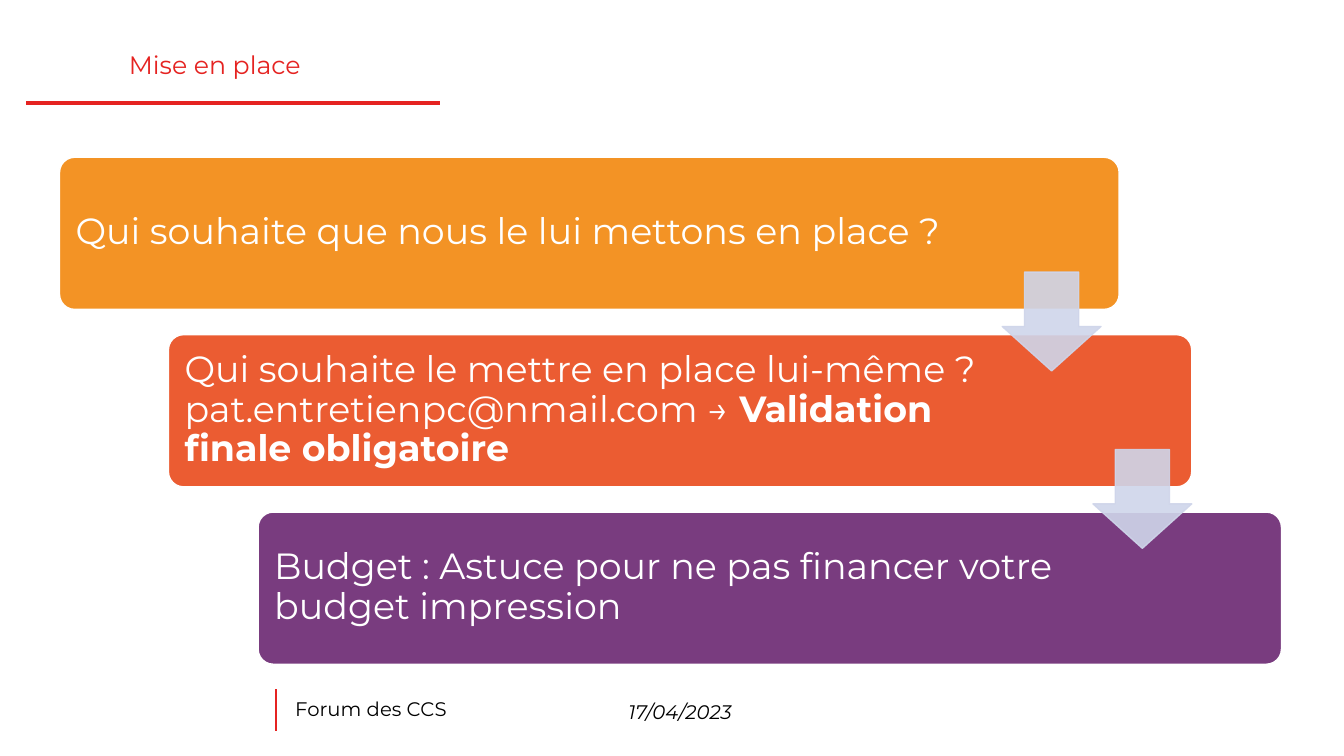
from lxml import etree
from pptx import Presentation
from pptx import util as u
from pptx.dml.color import RGBColor
from pptx.enum import shapes, text
from pptx.oxml import ns

PX = 9144
FONT = "Montserrat"
RED = RGBColor(0xE5, 0x23, 0x21)
BLACK = RGBColor(0, 0, 0)
WHITE = RGBColor(0xFF, 0xFF, 0xFF)
ORANGE = RGBColor(0xF3, 0x93, 0x25)
CORAL = RGBColor(0xEB, 0x5C, 0x32)
PURPLE = RGBColor(0x79, 0x3C, 0x7F)
PALE_BLUE = RGBColor(0xCF, 0xD5, 0xEA)

STEP_HEIGHT, STEP_PITCH = 151, 176
ARROW_SIZE = 98
STEPS = [
    (0, 1051, 883, ORANGE, [("Qui souhaite que nous le lui mettons en place ?", False)]),
    (108, 1015, 818, CORAL, [
        ("Qui souhaite le mettre en place lui-même ? pat.entretienpc@nmail.com → ", False),
        ("Validation finale obligatoire", True),
    ]),
    (197, 1015, 818, PURPLE, [
        ("Budget : Astuce pour ne pas financer votre budget impression", False),
    ]),
]


def emu(*lengths):
    return [u.Emu(length * PX) for length in lengths]


def add_text(slide, box, runs, size, color, italic=False, align=None,
             anchor=text.MSO_ANCHOR.TOP, spacing=0.9, inset=None):
    frame = slide.shapes.add_textbox(*emu(*box)).text_frame
    frame.word_wrap = True
    frame.vertical_anchor = anchor
    if inset is not None:
        (frame.margin_left, frame.margin_top,
         frame.margin_right, frame.margin_bottom) = emu(*[inset] * 4)
    paragraph = frame.paragraphs[0]
    paragraph.alignment = align
    paragraph.line_spacing = spacing
    for content, bold in runs:
        run = paragraph.add_run()
        run.text = content
        run.font.name = FONT
        run.font.size = u.Pt(size)
        run.font.bold = bold
        run.font.italic = italic
        run.font.color.rgb = color


def add_rule(slide, start, end, width):
    rule = slide.shapes.add_connector(
        shapes.MSO_CONNECTOR.STRAIGHT, *emu(*start, *end))
    rule.line.color.rgb = RED
    rule.line.width = u.Pt(width)
    etree.SubElement(rule._element.spPr, ns.qn("a:effectLst"))


def add_block(slide, kind, box, adjustments, fill, line):
    shape = slide.shapes.add_shape(kind, *emu(*box))
    shape.shadow.inherit = False
    for index, value in enumerate(adjustments):
        shape.adjustments[index] = value
    shape.fill.solid()
    shape.fill.fore_color.rgb = fill
    shape.line.color.rgb = line
    shape.line.width = u.Pt(1)
    return shape


def add_title(slide, left, top, width):
    add_text(slide, (left + 92, top, 875, 41), [("Mise en place", False)], 18, RED)
    add_rule(slide, (left, top + 55), (left + width, top + 55), 2.5)


def add_step(slide, left, top, width, text_width, color, runs):
    add_block(slide, shapes.MSO_SHAPE.ROUNDED_RECTANGLE,
              (left, top, width, STEP_HEIGHT), [0.1], color, WHITE)
    add_text(slide, (left + 5, top + 4, text_width, STEP_HEIGHT - 9), runs, 26, WHITE,
             anchor=text.MSO_ANCHOR.MIDDLE, inset=11)


def add_arrow(slide, left, top):
    arrow = add_block(slide, shapes.MSO_SHAPE.DOWN_ARROW,
                      (left, top, ARROW_SIZE, ARROW_SIZE), [0.55, 0.45],
                      PALE_BLUE, PALE_BLUE)
    for color in arrow._element.spPr.iter(ns.qn("a:srgbClr")):
        etree.SubElement(color, ns.qn("a:alpha"), val="90000")


def add_staircase(slide, left, top):
    for index, (offset, *step) in enumerate(STEPS):
        add_step(slide, left + offset, top + index * STEP_PITCH, *step)
    for index in range(len(STEPS) - 1):
        add_arrow(slide, left + 935 + index * 90, top + 114 + index * STEP_PITCH)


def add_footer(slide, left, top):
    add_rule(slide, (left, top), (left, top + 41), 1.5)
    add_text(slide, (left + 9, top + 5, 316, 54), [("Forum des CCS", False)], 14, BLACK)
    add_text(slide, (left + 325, top + 5, 151, 34), [("17/04/2023", False)], 14, BLACK,
             italic=True, align=text.PP_ALIGN.CENTER, spacing=1.0)


def main():
    presentation = Presentation()
    presentation.slide_width, presentation.slide_height = emu(1333, 750)
    slide = presentation.slides.add_slide(presentation.slide_layouts[6])
    add_title(slide, 26, 47, 410)
    add_staircase(slide, 59, 156)
    add_footer(slide, 274, 684)
    presentation.save("out.pptx")


if __name__ == "__main__":
    main()
